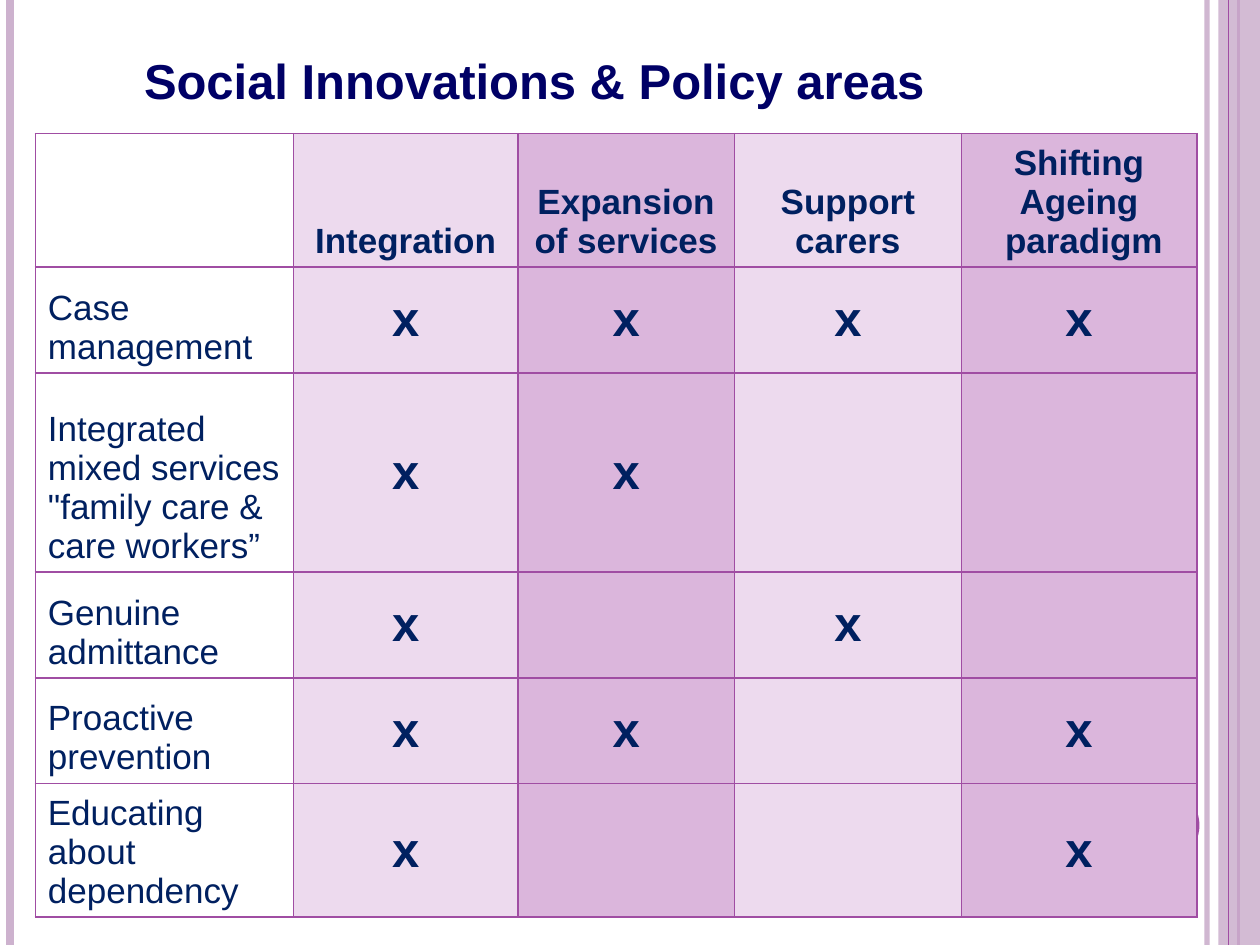
from lxml.etree import SubElement
from pptx import Presentation
from pptx.dml.color import RGBColor
from pptx.enum.shapes import MSO_CONNECTOR, MSO_SHAPE
from pptx.enum.text import MSO_ANCHOR, PP_ALIGN
from pptx.oxml import parse_xml
from pptx.oxml.ns import nsdecls, qn
from pptx.util import Inches, Pt

WIDE, HIGH = 10, 7.5
TITLE = "Social Innovations & Policy areas"
HEADS = ["Integration", "Expansion of services", "Support carers",
         "Shifting\nAgeing\n paradigm"]
ROWS = [
    ("Case management", "xxxx"),
    ('Integrated mixed services "family care & care workers”', "xx  "),
    ("Genuine admittance", "x x "),
    ("Proactive prevention", "xx x"),
    ("Educating about dependency", "x  x"),
]
COLS = [2.05, 1.78, 1.72, 1.8, 1.87]
TALL = [1.06, 0.84, 1.58, 0.84, 0.84, 1.06]
PLUM, LILAC, NAVY = "A04DA3", "CDB2CE", "002060"
TINTS = ["EDDAEE", "DBB6DC"]
BARS = [(9.58, LILAC, 3, 93), (0.08, LILAC, 4.5, 100), (9.83, PLUM, 1.5, 100)]
EDGE = (9.75, PLUM, 0.75, 100)
HEAD = dict(size=Pt(20), bold=True)
NAME = dict(size=Pt(20), bold=False)
MARK = dict(size=Pt(28), bold=True)


def tint(part, hue, alpha=100):
    part.solid()
    part.fore_color.rgb = RGBColor.from_string(hue)
    if alpha < 100:
        clr = part._xPr.find(qn("a:solidFill"))[0]
        SubElement(clr, qn("a:alpha")).set("val", str(alpha * 1000))


def style(item, form):
    for key, val in form.items():
        setattr(item, key, val)


def write(frame, text, form, align, hue=NAVY):
    frame.text = text
    for para in frame.paragraphs:
        para.alignment = align
        for run in para.runs:
            style(run.font, dict(name="Arial", **form))
            tint(run.font.fill, hue)


def rule(slide, x, hue, width, alpha):
    line = slide.shapes.add_connector(
        MSO_CONNECTOR.STRAIGHT, Inches(x), 0, Inches(x), Inches(HIGH))
    line.line.width = Pt(width)
    tint(line.line.fill, hue, alpha)
    SubElement(line._element.spPr, qn("a:effectLst"))


def block(slide, kind, box, hue, alpha=100):
    shape = slide.shapes.add_shape(kind, *map(Inches, box))
    shape.shadow.inherit = False
    tint(shape.fill, hue, alpha)
    shape.line.fill.background()


def frame(cell):
    props = cell._tc.get_or_add_tcPr()
    for side in "LRTB":
        props.append(parse_xml(
            f'<a:ln{side} {nsdecls("a")} w="12700"><a:solidFill>'
            f'<a:srgbClr val="{PLUM}"/></a:solidFill></a:ln{side}>'))


def grid(slide):
    table = slide.shapes.add_table(
        len(TALL), len(COLS), Inches(0.28), Inches(1.06),
        Inches(sum(COLS)), Inches(sum(TALL))).table
    for col, width in zip(table.columns, COLS):
        col.width = Inches(width)
    for row, height in zip(table.rows, TALL):
        row.height = Inches(height)
    data = [["", *HEADS]] + [[name, *marks] for name, marks in ROWS]
    for r, row in enumerate(data):
        for c, text in enumerate(row):
            cell = table.cell(r, c)
            frame(cell)
            tint(cell.fill, TINTS[(c - 1) % 2] if c else "FFFFFF")
            form = HEAD if r == 0 else MARK if c else NAME
            cell.vertical_anchor = (
                MSO_ANCHOR.MIDDLE if r and c else MSO_ANCHOR.BOTTOM)
            write(cell.text_frame, text.rstrip(), form,
                  PP_ALIGN.CENTER if c else PP_ALIGN.LEFT)


def main():
    deck = Presentation()
    deck.slide_width, deck.slide_height = Inches(WIDE), Inches(HIGH)
    slide = deck.slides.add_slide(deck.slide_layouts[5])
    for bar in BARS:
        rule(slide, *bar)
    block(slide, MSO_SHAPE.RECTANGLE, (9.67, 0, 0.33, HIGH), LILAC, 87)
    rule(slide, *EDGE)
    block(slide, MSO_SHAPE.OVAL, (8.92, 6.25, 0.6, 0.6), PLUM)
    title = slide.shapes.title
    style(title, dict(left=Inches(0.27), top=Inches(0.28),
                      width=Inches(8.59), height=Inches(0.64)))
    style(title.text_frame, dict(margin_right=Inches(0.75), word_wrap=True,
                                 vertical_anchor=MSO_ANCHOR.MIDDLE))
    write(title.text_frame, TITLE, MARK, PP_ALIGN.CENTER, "000066")
    title.text_frame.paragraphs[0].line_spacing = 1.15
    grid(slide)
    deck.save("out.pptx")


if __name__ == "__main__":
    main()
